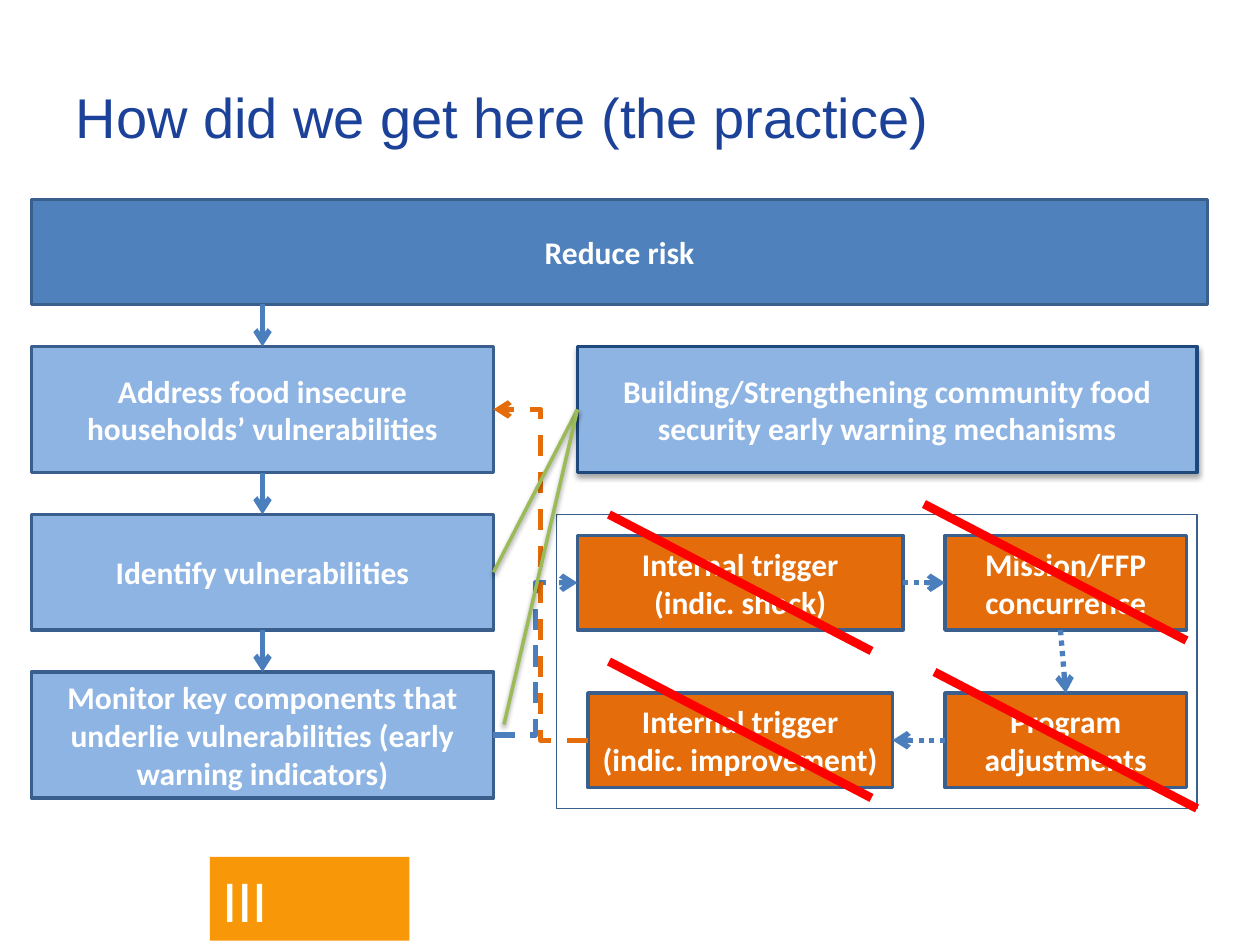
from dataclasses import dataclass
from typing import Optional, Union

import lxml.etree
import pptx
import pptx.dml.color
import pptx.enum.dml
import pptx.enum.shapes
import pptx.enum.text
import pptx.oxml.ns
import pptx.util

COLUMNS, ROWS = 120, 90
CELL = pptx.util.Inches(10) / COLUMNS
TOP, LEFT, BOTTOM, RIGHT = range(4)
COLORS = {
    "title": "1B4298", "banner": "4F81BD", "step": "8EB4E3", "trigger": "E46C0A",
    "outline": "3A5F8C", "dark outline": "1F497D", "arrow": "4B7EBC", "link": "9BBB59",
    "strike": "FF0000", "badge": "F89708", "white": "FFFFFF", "shadow": "000000",
}
ALIGN = pptx.enum.text.PP_ALIGN
ANCHOR = pptx.enum.text.MSO_ANCHOR
DASH = pptx.enum.dml.MSO_LINE.DASH
DOTS = pptx.enum.dml.MSO_LINE.ROUND_DOT


@dataclass(frozen=True)
class Shadow:
    opacity: int
    distance: float
    blur: float = 3.1


@dataclass(frozen=True)
class Box:
    """A rectangle measured in grid columns and rows."""
    name: str
    column: float
    row: float
    width: float
    height: float
    lines: tuple[str, ...] = ()
    fill: Optional[str] = None
    outline: str = "outline"
    weight: float = 2
    shadow: Optional[Shadow] = None


@dataclass(frozen=True)
class Point:
    column: float
    row: float


@dataclass(frozen=True)
class Joint:
    """The middle of one side of a named box."""
    box: str
    side: int


@dataclass(frozen=True)
class Link:
    start: Union[Point, Joint]
    end: Union[Point, Joint]
    color: str = "arrow"
    weight: float = 3
    dash: Optional[pptx.enum.dml.MSO_LINE] = None
    arrow: bool = True
    elbow: bool = False
    shadow: Optional[Shadow] = None


BOXES = [
    Box("goal", 3, 19, 112, 10, ("Reduce risk",), "banner"),
    Box("address", 3, 33, 44, 12, ("Address food insecure households’ vulnerabilities",), "step"),
    Box("identify", 3, 49, 44, 11, ("Identify vulnerabilities",), "step"),
    Box("monitor", 3, 64, 44, 12,
        ("Monitor key components that underlie vulnerabilities (early warning indicators)",),
        "step"),
    Box("shock", 55, 51, 31, 9, ("Internal trigger", "(indic. shock)"), "trigger"),
    Box("concurrence", 90, 51, 23, 9, ("Mission/FFP concurrence",), "trigger"),
    Box("adjustments", 90, 66, 23, 9, ("Program adjustments",), "trigger"),
    Box("improvement", 56, 66, 29, 9, ("Internal trigger", "(indic. improvement)"), "trigger"),
    Box("frame", 53, 49, 61, 28, weight=1),
    Box("warning", 55, 33, 59, 12,
        ("Building/Strengthening community food security early warning mechanisms",),
        "step", "dark outline", shadow=Shadow(35, 1.8)),
]
STRIKES = [
    Link(Point(column, row), Point(column + 25, row + 13), "strike", 5, arrow=False)
    for column, row in ((58, 49), (88, 48), (89, 64), (58, 63))
]
GREEN = [
    Link(start, Joint("warning", LEFT), "link", 2, arrow=False, shadow=Shadow(38, 1.6))
    for start in (Joint("identify", RIGHT), Point(48, 69))
]
LINKS = [
    Link(Joint("address", BOTTOM), Joint("identify", TOP)),
    Link(Joint("identify", BOTTOM), Joint("monitor", TOP)),
    Link(Joint("monitor", RIGHT), Joint("shock", LEFT), dash=DASH, elbow=True),
    Link(Joint("shock", RIGHT), Joint("concurrence", LEFT), dash=DOTS),
    Link(Point(101, 60), Joint("adjustments", TOP), dash=DOTS),
    Link(Joint("adjustments", LEFT), Joint("improvement", RIGHT), dash=DOTS),
    Link(Joint("improvement", LEFT), Joint("address", RIGHT), "trigger", dash=DASH, elbow=True),
    *STRIKES,
    Link(Point(25, 29), Joint("address", TOP)),
    *GREEN,
]


def cells(count: float) -> int:
    return round(count * CELL)


def rgb(name: str) -> pptx.dml.color.RGBColor:
    return pptx.dml.color.RGBColor.from_string(COLORS[name])


def add_element(parent, tag: str, **attributes):
    return lxml.etree.SubElement(parent, pptx.oxml.ns.qn(tag), attributes)


def set_shadow(shape, shadow: Optional[Shadow]) -> None:
    """Replace the theme's shadow; call once the line is set."""
    effects = add_element(shape._element.spPr, "a:effectLst")
    if shadow:
        outer = add_element(effects, "a:outerShdw", blurRad=str(pptx.util.Pt(shadow.blur)),
                            dist=str(pptx.util.Pt(shadow.distance)), dir="5400000",
                            rotWithShape="0")
        color = add_element(outer, "a:srgbClr", val=COLORS["shadow"])
        add_element(color, "a:alpha", val=str(shadow.opacity * 1000))


def write(frame, lines: tuple[str, ...], size: float, color: str, font: str = "Calibri",
          bold: bool = False, align=ALIGN.CENTER, anchor=ANCHOR.MIDDLE) -> None:
    frame.word_wrap = True
    frame.vertical_anchor = anchor
    for index, line in enumerate(lines):
        para = frame.add_paragraph() if index else frame.paragraphs[0]
        para.alignment = align
        span = para.add_run()
        span.text = line
        span.font.name = font
        span.font.size = pptx.util.Pt(size)
        span.font.bold = bold
        span.font.color.rgb = rgb(color)


def add_rectangle(page, column: float, row: float, width: float, height: float):
    return page.shapes.add_shape(pptx.enum.shapes.MSO_SHAPE.RECTANGLE,
                                 *map(cells, (column, row, width, height)))


def draw_box(page, box: Box):
    shape = add_rectangle(page, box.column, box.row, box.width, box.height)
    if box.fill:
        shape.fill.solid()
        shape.fill.fore_color.rgb = rgb(box.fill)
    else:
        shape.fill.background()
    shape.line.color.rgb = rgb(box.outline)
    shape.line.width = pptx.util.Pt(box.weight)
    set_shadow(shape, box.shadow)
    write(shape.text_frame, box.lines, 18, "white", bold=True)
    return shape


def draw_link(page, link: Link, shapes: dict) -> None:
    kinds = pptx.enum.shapes.MSO_CONNECTOR
    ends = [cells(value) for end in (link.start, link.end)
            for value in ((end.column, end.row) if isinstance(end, Point) else (0, 0))]
    line = page.shapes.add_connector(kinds.ELBOW if link.elbow else kinds.STRAIGHT, *ends)
    for end, connect in ((link.start, line.begin_connect), (link.end, line.end_connect)):
        if isinstance(end, Joint):
            connect(shapes[end.box], end.side)
    line.line.color.rgb = rgb(link.color)
    line.line.width = pptx.util.Pt(link.weight)
    if link.dash:
        line.line.dash_style = link.dash
    if link.arrow:
        add_element(line._element.spPr.find(pptx.oxml.ns.qn("a:ln")), "a:tailEnd", type="arrow")
    set_shadow(line, link.shadow)


def draw_badge(page) -> None:
    badge = add_rectangle(page, 20, 81.6, 19, 8)
    badge.fill.solid()
    badge.fill.fore_color.rgb = rgb("badge")
    badge.line.fill.background()
    set_shadow(badge, None)
    write(badge.text_frame, ("III",), 34, "white", align=ALIGN.LEFT, anchor=ANCHOR.TOP)
    badge.text_frame.auto_size = pptx.enum.text.MSO_AUTO_SIZE.SHAPE_TO_FIT_TEXT


def main() -> None:
    deck = pptx.Presentation()
    deck.slide_width, deck.slide_height = cells(COLUMNS), cells(ROWS)
    page = deck.slides.add_slide(deck.slide_layouts[5])
    title = page.shapes.title
    title.left, title.top, title.width, title.height = map(cells, (6, 3.6, 108, 15))
    write(title.text_frame, ("How did we get here (the practice)",), 32, "title", "Arial",
          align=ALIGN.LEFT)
    draw_badge(page)
    shapes = {box.name: draw_box(page, box) for box in BOXES}
    for link in LINKS:
        draw_link(page, link, shapes)
    deck.save("out.pptx")


if __name__ == "__main__":
    main()
